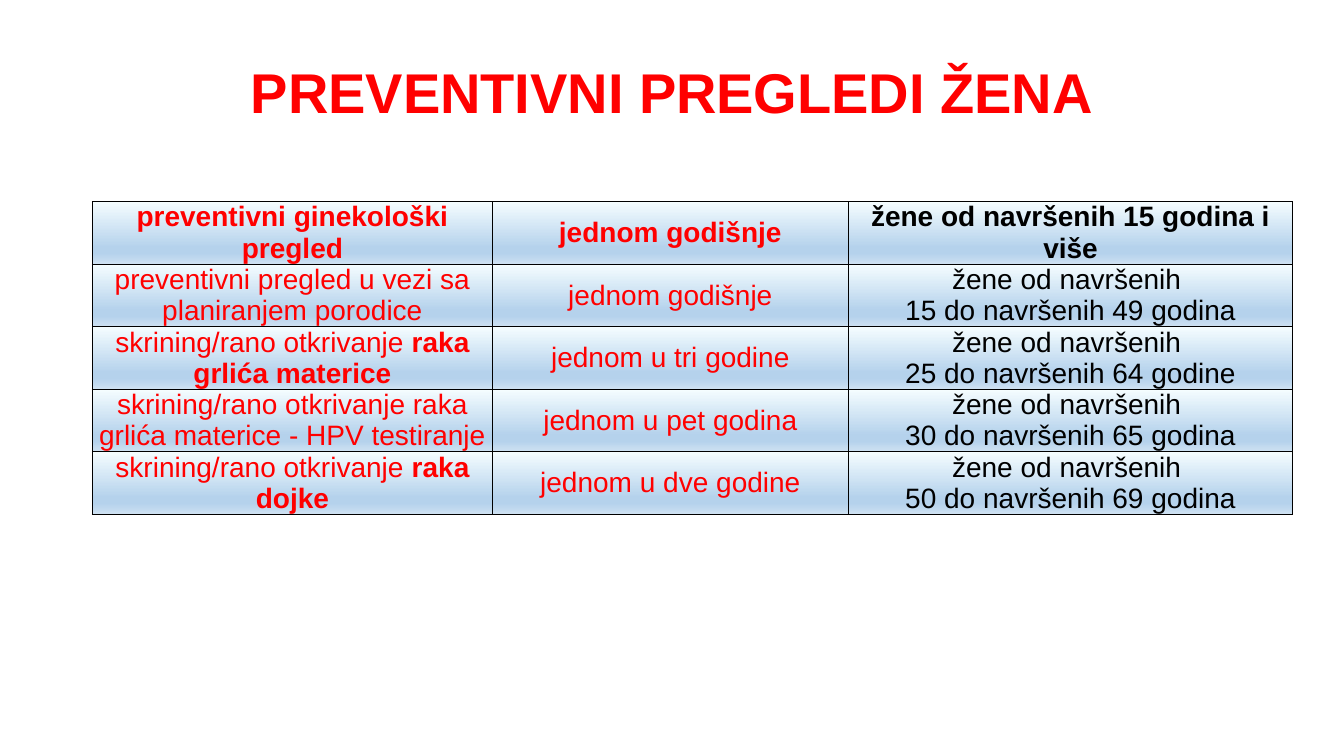
from lxml.etree import SubElement as Sub
from pptx import Presentation
from pptx.enum.text import MSO_ANCHOR as Anchor, PP_ALIGN as Align
from pptx.oxml.ns import qn
from pptx.dml.color import RGBColor as Rgb
from pptx.util import Pt

HUES = {"red": "FF0000", "black": "000000", "pale": "F5FDFF",
        "blue": "B5D2EC", "light": "CEE1F2"}
STOPS = [(0, "pale"), (74, "blue"), (83, "blue"), (100, "light")]
WIDTHS = [285.8, 254.2, 317.5]
TINTS = ["red", "red", "black"]
ROWS = [
    ["*preventivni ginekološki pregled", "*jednom godišnje",
     "*žene od navršenih 15 godina i više"],
    ["preventivni pregled u vezi sa planiranjem porodice", "jednom godišnje",
     "žene od navršenih \n15 do navršenih 49 godina"],
    ["skrining/rano otkrivanje *raka grlića materice", "jednom u tri godine",
     "žene od navršenih \n25 do navršenih 64 godine"],
    ["skrining/rano otkrivanje raka grlića materice - HPV testiranje",
     "jednom u pet godina",
     "žene od navršenih \n30 do navršenih 65 godina"],
    ["skrining/rano otkrivanje *raka dojke", "jednom u dve godine",
     "žene od navršenih \n50 do navršenih 69 godina"],
]


class Deck:
    """Hold the style and the current slide, and add elements to it."""

    def __init__(self):
        self.prs = Presentation()
        self.prs.slide_width, self.prs.slide_height = Pt(960), Pt(540)
        self.slide = self.prs.slides.add_slide(self.prs.slide_layouts[5])
        self.face = "Arial"

    def apply(self, item, form):
        for name, value in form.items():
            setattr(item, name, value)

    def label(self, para, text, size, hue):
        para.alignment = Align.CENTER
        for num, part in enumerate(text.split("*")):
            if part:
                run = para.add_run()
                run.text = part
                self.apply(run.font, {"name": self.face, "size": Pt(size),
                                      "bold": num % 2 == 1})
                run.font.color.rgb = Rgb.from_string(HUES[hue])

    def title(self, text, box):
        shape = self.slide.shapes.title
        names = ["left", "top", "width", "height"]
        self.apply(shape, dict(zip(names, map(Pt, box))))
        self.apply(shape.text_frame, {"vertical_anchor": Anchor.MIDDLE,
                                      "word_wrap": True})
        para = shape.text_frame.paragraphs[0]
        para.line_spacing = 0.9
        self.label(para, text, 40, "red")

    def paint(self, cell):
        props = cell._tc.get_or_add_tcPr()
        for side in ["lnL", "lnR", "lnT", "lnB"]:
            line = Sub(props, qn("a:" + side), w=str(Pt(1)))
            fill = Sub(line, qn("a:solidFill"))
            Sub(fill, qn("a:srgbClr"), val=HUES["black"])
        grad = Sub(props, qn("a:gradFill"), rotWithShape="1")
        stops = Sub(grad, qn("a:gsLst"))
        for pos, hue in STOPS:
            stop = Sub(stops, qn("a:gs"), pos=str(pos * 1000))
            Sub(stop, qn("a:srgbClr"), val=HUES[hue])
        Sub(grad, qn("a:lin"), ang="5400000", scaled="0")

    def table(self, rows, left, top, widths, high):
        frame = self.slide.shapes.add_table(
            len(rows), len(widths), Pt(left), Pt(top),
            Pt(sum(widths)), Pt(high * len(rows)))
        grid = frame.table
        self.apply(grid, {"first_row": False, "horz_banding": False})
        for col, width in zip(grid.columns, widths):
            col.width = Pt(width)
        form = {"margin_left": 0, "margin_right": 0, "margin_top": 0,
                "margin_bottom": 0, "vertical_anchor": Anchor.MIDDLE}
        for row, texts in zip(grid.rows, rows):
            row.height = Pt(high)
            for cell, text, hue in zip(row.cells, texts, TINTS):
                self.apply(cell, form)
                self.paint(cell)
                body = cell.text_frame
                for num, line in enumerate(text.split("\n")):
                    para = body.add_paragraph() if num else body.paragraphs[0]
                    self.label(para, line, 20, hue)


def main():
    deck = Deck()
    deck.title("*PREVENTIVNI PREGLEDI ŽENA", (66, 28.75, 828, 79))
    deck.table(ROWS, 66, 144, WIDTHS, 44.6)
    deck.prs.save("out.pptx")


if __name__ == "__main__":
    main()
